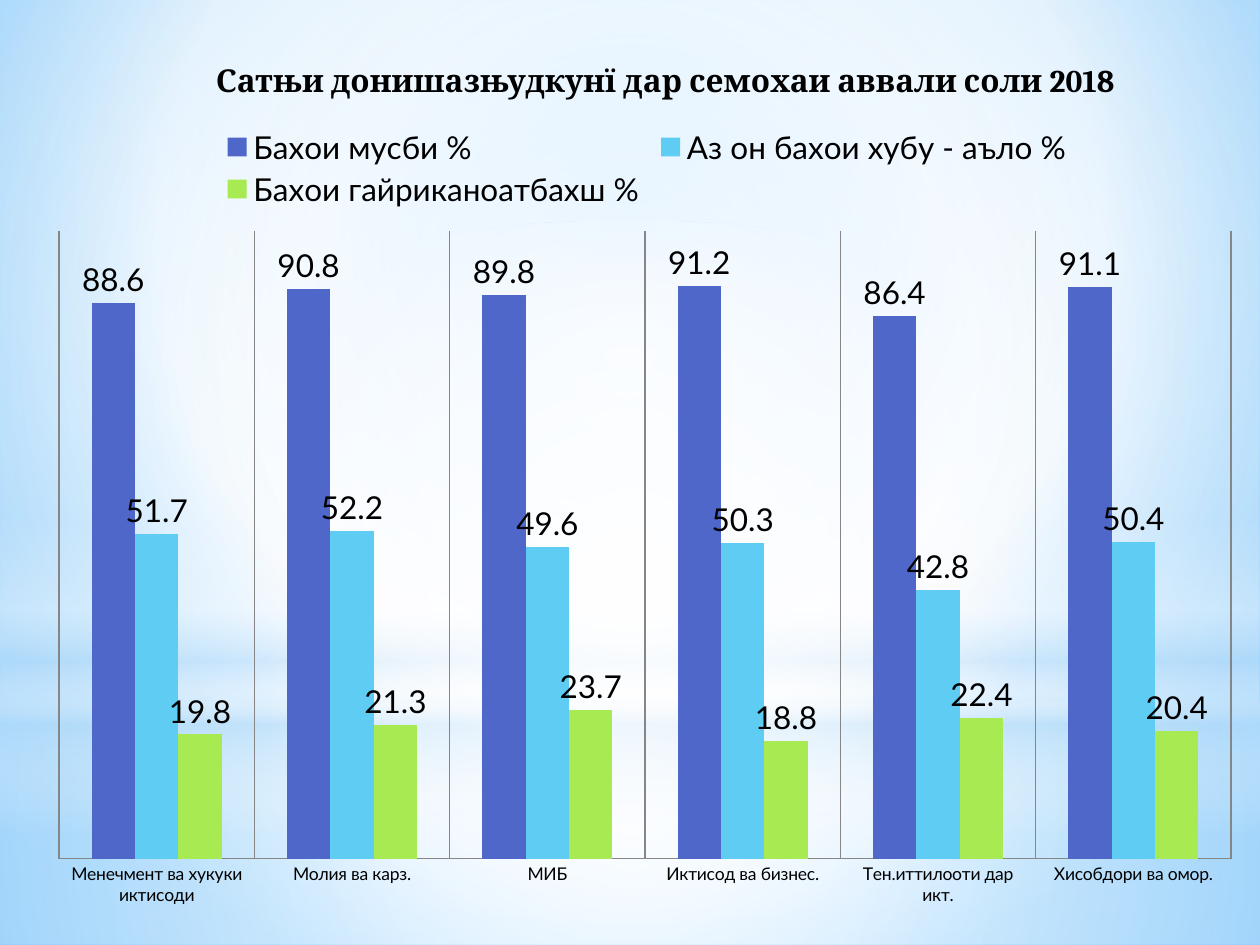
from dataclasses import dataclass

from lxml import etree
from pptx import Presentation
from pptx.chart.chart import Chart
from pptx.chart.data import CategoryChartData
from pptx.dml.color import RGBColor
from pptx.enum.chart import (XL_CHART_TYPE, XL_LABEL_POSITION,
                             XL_LEGEND_POSITION, XL_TICK_MARK)
from pptx.enum.shapes import MSO_SHAPE
from pptx.oxml.ns import qn
from pptx.slide import Slide
from pptx.util import Emu, Pt

PX_PER_INCH = 126
EMU_PER_INCH = 914400

COLUMNS = XL_CHART_TYPE.COLUMN_CLUSTERED
OUTSIDE_END = XL_LABEL_POSITION.OUTSIDE_END
LEGEND_TOP = XL_LEGEND_POSITION.TOP
NO_TICKS = XL_TICK_MARK.NONE
RECTANGLE = MSO_SHAPE.RECTANGLE
OVAL = MSO_SHAPE.OVAL

BLACK = RGBColor(0x00, 0x00, 0x00)
WHITE = RGBColor(0xFF, 0xFF, 0xFF)
PALE_BLUE = RGBColor(0xB4, 0xDC, 0xFA)
SKY_BLUE = RGBColor(0x9E, 0xD5, 0xFF)
DEEP_SKY = RGBColor(0x5B, 0xB9, 0xFF)
AXIS_GREY = RGBColor(0x86, 0x86, 0x86)
INDIGO = RGBColor(0x4E, 0x67, 0xC8)
CYAN = RGBColor(0x5E, 0xCC, 0xF3)
LIME = RGBColor(0xA7, 0xEA, 0x52)

TITLE_FONT = "Cambria"
CHART_FONT = "Lato"


@dataclass(frozen=True)
class Box:
    left: int
    top: int
    width: int
    height: int

    def emu(self) -> tuple[Emu, Emu, Emu, Emu]:
        return px(self.left), px(self.top), px(self.width), px(self.height)


@dataclass(frozen=True)
class Stop:
    position: int
    color: RGBColor
    opacity: int = 100


@dataclass(frozen=True)
class Gradient:
    """Circular around the focus (left, top, right, bottom), else top to bottom."""
    stops: tuple[Stop, ...]
    focus: tuple[int, int, int, int] | None = None


@dataclass(frozen=True)
class Glow:
    preset: MSO_SHAPE
    box: Box
    gradient: Gradient


@dataclass(frozen=True)
class Grade:
    name: str
    percents: tuple[float, ...]
    color: RGBColor


CENTRE = (50, 50, 50, 50)
BACKDROP = Gradient((Stop(0, SKY_BLUE), Stop(60, WHITE), Stop(100, DEEP_SKY)),
                    (20, 10, 20, 60))
GLOWS = (
    Glow(RECTANGLE, Box(0, 703, 1260, 242), Gradient(
        (Stop(0, WHITE, 91), Stop(37, WHITE, 76), Stop(100, PALE_BLUE, 79)), CENTRE)),
    Glow(RECTANGLE, Box(0, 0, 1260, 703), Gradient(
        (Stop(0, WHITE, 89), Stop(48, WHITE, 62), Stop(100, PALE_BLUE, 79)), CENTRE)),
    Glow(RECTANGLE, Box(0, 519, 1260, 315), Gradient(
        (Stop(0, WHITE, 0), Stop(29, WHITE, 30), Stop(45, PALE_BLUE, 40),
         Stop(55, WHITE, 26), Stop(65, PALE_BLUE, 60), Stop(100, WHITE, 0)))),
    Glow(OVAL, Box(0, 221, 1260, 703), Gradient(
        (Stop(0, WHITE), Stop(56, WHITE, 0)), CENTRE)),
)

TITLE = "Сатњи донишазњудкунї дар семохаи аввали соли 2018"
TITLE_BOX = Box(64, 55, 1160, 50)
TITLE_INSET = 152

CHART_BOX = Box(35, 111, 1221, 813)
PLOT_BOX = Box(59, 231, 1172, 628)
LEGEND_BOX = Box(216, 124, 862, 88)
DEPARTMENTS = ("Менечмент ва хукуки иктисоди", "Молия ва карз.", "МИБ",
               "Иктисод ва бизнес.", "Тен.иттилооти дар икт.", "Хисобдори ва омор.")
GRADES = (
    Grade("Бахои мусби %", (88.6, 90.8, 89.8, 91.2, 86.4, 91.1), INDIGO),
    Grade("Аз он бахои хубу - аъло %", (51.7, 52.2, 49.6, 50.3, 42.8, 50.4), CYAN),
    Grade("Бахои гайриканоатбахш %", (19.8, 21.3, 23.7, 18.8, 22.4, 20.4), LIME),
)


def px(length: int) -> Emu:
    return Emu(round(length * EMU_PER_INCH / PX_PER_INCH))


def apply_gradient(properties: etree._Element, gradient: Gradient) -> None:
    """Put the gradient in place of the solid fill among the properties."""
    fill = etree.Element(qn("a:gradFill"), rotWithShape="1")
    stop_list = etree.SubElement(fill, qn("a:gsLst"))
    for stop in gradient.stops:
        entry = etree.SubElement(stop_list, qn("a:gs"), pos=str(stop.position * 1000))
        color = etree.SubElement(entry, qn("a:srgbClr"), val=str(stop.color))
        if stop.opacity < 100:
            etree.SubElement(color, qn("a:alpha"), val=str(stop.opacity * 1000))
    if gradient.focus:
        circle = etree.SubElement(fill, qn("a:path"), path="circle")
        sides = {side: str(share * 1000) for side, share in zip("ltrb", gradient.focus)}
        etree.SubElement(circle, qn("a:fillToRect"), sides)
    else:
        etree.SubElement(fill, qn("a:lin"), ang="5400000", scaled="0")
    properties.replace(properties.find(qn("a:solidFill")), fill)


def draw_glow(slide: Slide, glow: Glow) -> None:
    shape = slide.shapes.add_shape(glow.preset, *glow.box.emu())
    shape.shadow.inherit = False
    shape.line.fill.background()
    shape.fill.solid()
    apply_gradient(shape._element.spPr, glow.gradient)


def draw_title(slide: Slide) -> None:
    frame = slide.shapes.add_textbox(*TITLE_BOX.emu()).text_frame
    frame.word_wrap = True
    frame.margin_left = px(TITLE_INSET)
    heading = frame.paragraphs[0]
    heading.text = TITLE
    heading.font.name = TITLE_FONT
    heading.font.size = Pt(18)
    heading.font.bold = True
    heading.font.color.rgb = BLACK


def place_in_chart(part: etree._Element, box: Box, index: int, inner: bool) -> None:
    """Fix the place of a chart part, as shares of the chart area."""
    for old in part.findall(qn("c:layout")):
        part.remove(old)
    layout = etree.Element(qn("c:layout"))
    manual = etree.SubElement(layout, qn("c:manualLayout"))
    if inner:
        etree.SubElement(manual, qn("c:layoutTarget"), val="inner")
    for mode in ("xMode", "yMode"):
        etree.SubElement(manual, qn(f"c:{mode}"), val="edge")
    shares = {
        "x": (box.left - CHART_BOX.left) / CHART_BOX.width,
        "y": (box.top - CHART_BOX.top) / CHART_BOX.height,
        "w": box.width / CHART_BOX.width,
        "h": box.height / CHART_BOX.height,
    }
    for key, share in shares.items():
        etree.SubElement(manual, qn(f"c:{key}"), val=f"{share:.4f}")
    part.insert(index, layout)


def style_axes(chart: Chart) -> None:
    departments = chart.category_axis
    departments.major_tick_mark = NO_TICKS
    departments.tick_labels.font.size = Pt(10)
    departments.has_major_gridlines = True
    for line in (departments.format.line, departments.major_gridlines.format.line):
        line.color.rgb = AXIS_GREY
        line.width = Pt(0.75)
    percents = chart.value_axis
    percents.minimum_scale, percents.maximum_scale = 0, 100
    percents.has_major_gridlines = False
    percents.visible = False


def draw_chart(slide: Slide) -> None:
    data = CategoryChartData()
    data.categories = DEPARTMENTS
    for grade in GRADES:
        data.add_series(grade.name, grade.percents)
    chart = slide.shapes.add_chart(COLUMNS, *CHART_BOX.emu(), data).chart
    chart.has_title = False
    chart.font.name = CHART_FONT
    chart.font.size = Pt(18)
    chart.font.color.rgb = BLACK
    style_axes(chart)

    plot = chart.plots[0]
    plot.gap_width, plot.overlap = 150, 0
    plot.vary_by_categories = False
    for series, grade in zip(plot.series, GRADES):
        series.format.fill.solid()
        series.format.fill.fore_color.rgb = grade.color
        series.data_labels.show_value = True
        series.data_labels.position = OUTSIDE_END

    chart.has_legend = True
    chart.legend.position = LEGEND_TOP
    chart.legend.include_in_layout = False
    place_in_chart(chart.legend._element, LEGEND_BOX, 1, inner=False)
    plot_area = chart._chartSpace.find(f".//{qn('c:plotArea')}")
    place_in_chart(plot_area, PLOT_BOX, 0, inner=True)


def main() -> None:
    deck = Presentation()
    deck.slide_width, deck.slide_height = px(1260), px(945)
    slide = deck.slides.add_slide(deck.slide_layouts[6])
    slide.background.fill.solid()
    apply_gradient(slide._element.find(f".//{qn('p:bgPr')}"), BACKDROP)
    for glow in GLOWS:
        draw_glow(slide, glow)
    draw_title(slide)
    draw_chart(slide)
    deck.save("out.pptx")


if __name__ == "__main__":
    main()
